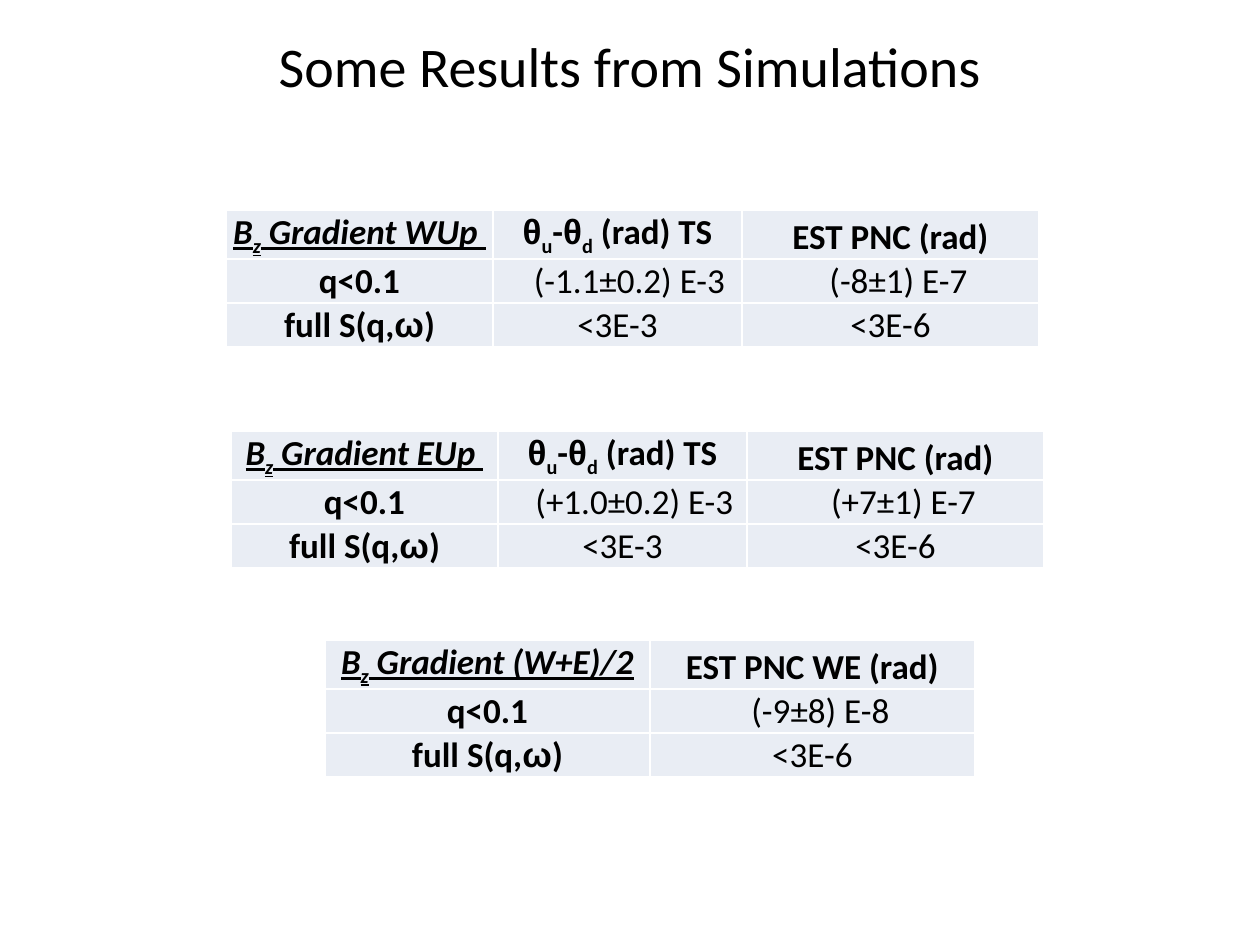
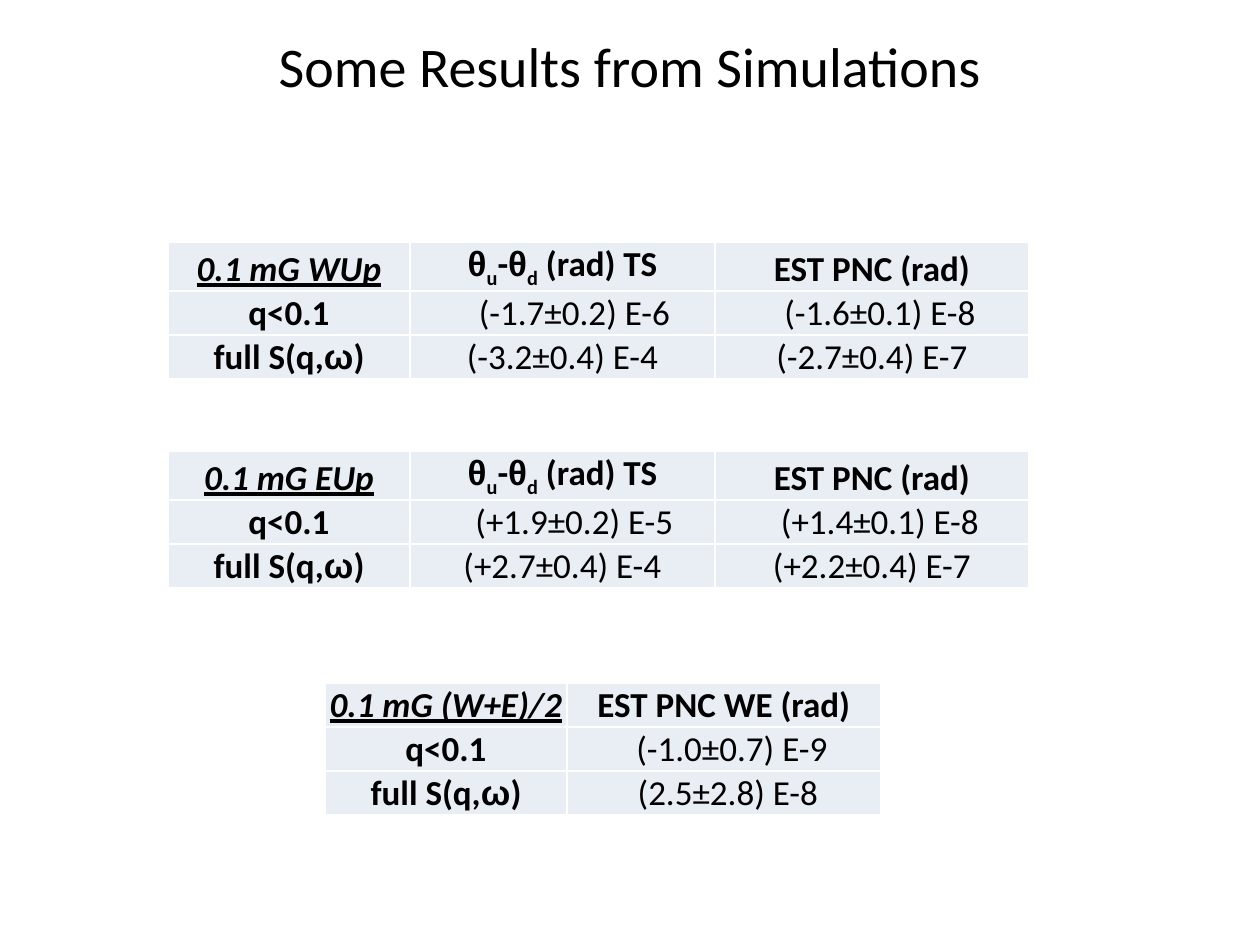
"""Build two slides of simulation results, each with three small tables."""
from itertools import groupby

from lxml.etree import SubElement
from pptx import Presentation
from pptx.dml.color import RGBColor
from pptx.enum.text import MSO_ANCHOR as Anchor, PP_ALIGN as Align
from pptx.oxml.ns import qn
from pptx.util import Pt

PX = 914400 // 126
BLACK = RGBColor(0x00, 0x00, 0x00)
WHITE = RGBColor(0xFF, 0xFF, 0xFF)
PALE_BLUE = RGBColor(0xE9, 0xED, 0xF4)
BODY_FONT, GREEK_FONT = "Calibri", "Arial"
GREEK = "θω"

TITLE = "Some Results from Simulations"
TITLE_BOX = (63, 10, 1134, 110)
ROW_HEIGHT, SUBSCRIPT_ROW_HEIGHT = 44, 49
SPACE_WIDTH = 8

ROTATION = "θ_u-θ_d (rad) TS"
ASYMMETRY = "EST PNC (rad)"
AVERAGE = "EST PNC WE (rad)"
ROW_LABELS = ("q<0.1", "full S(q,ω)")

# Each table: left, top, column widths, header, low-q values, full values, indents in spaces
SLIDES = [
    [
        (226, 210, (267, 249, 297), ("B_z Gradient WUp ", ROTATION, ASYMMETRY),
         ("(-1.1±0.2) E-3", "(-8±1) E-7"), ("<3E-3", "<3E-6"), ((3, 2), (0, 0))),
        (231, 431, (267, 249, 297), ("B_z Gradient EUp ", ROTATION, ASYMMETRY),
         ("(+1.0±0.2) E-3", "(+7±1) E-7"), ("<3E-3", "<3E-6"), ((3, 2), (0, 0))),
        (325, 640, (325, 325), ("B_z Gradient (W+E)/2", AVERAGE),
         ("(-9±8) E-8",), ("<3E-6",), ((2,), (0,))),
    ],
    [
        (168, 242, (242, 305, 314), ("0.1 mG WUp", ROTATION, ASYMMETRY),
         ("(-1.7±0.2) E-6", "(-1.6±0.1) E-8"), ("(-3.2±0.4) E-4", "(-2.7±0.4) E-7"),
         ((3, 2), (0, 0))),
        (168, 451, (242, 305, 314), ("0.1 mG EUp", ROTATION, ASYMMETRY),
         ("(+1.9±0.2) E-5", "(+1.4±0.1) E-8"), ("(+2.7±0.4) E-4", "(+2.2±0.4) E-7"),
         ((3, 2), (0, 0))),
        (325, 683, (242, 314), ("0.1 mG (W+E)/2", AVERAGE),
         ("(-1.0±0.7) E-9",), ("(2.5±2.8) E-8",), ((2,), (1,))),
    ],
]


def split_runs(markup):
    """Yield (text, is_greek, is_subscript); an underscore lowers the next letter."""
    letters = [(letter, letter in GREEK, markup[max(index - 1, 0)] == "_")
               for index, letter in enumerate(markup) if letter != "_"]
    for (greek, subscript), group in groupby(letters, key=lambda item: item[1:]):
        yield "".join(item[0] for item in group), greek, subscript


def write_runs(paragraph, markup, size, bold=False, emphasis=False):
    """Write marked-up text as formatted, centred runs."""
    paragraph.alignment = Align.CENTER
    for text, greek, subscript in split_runs(markup):
        run = paragraph.add_run()
        run.text = text
        font = run.font
        font.name = GREEK_FONT if greek else BODY_FONT
        font.size = Pt(size)
        font.color.rgb = BLACK
        font.bold, font.italic, font.underline = bold, emphasis, emphasis
        if subscript:
            run._r.get_or_add_rPr().set("baseline", "-25000")


def style_cell(cell, indent):
    """Give a cell white borders, a pale fill and narrow margins."""
    properties = cell._tc.get_or_add_tcPr()
    for side in ("lnL", "lnR", "lnT", "lnB"):
        line = SubElement(properties, qn(f"a:{side}"), w=str(Pt(1)))
        fill = SubElement(line, qn("a:solidFill"))
        SubElement(fill, qn("a:srgbClr"), val=str(WHITE))
    cell.fill.solid()
    cell.fill.fore_color.rgb = PALE_BLUE
    cell.vertical_anchor = Anchor.BOTTOM
    cell.margin_left = (1 + indent * SPACE_WIDTH) * PX
    cell.margin_right = cell.margin_top = PX
    cell.margin_bottom = 0


def add_results_table(slide, left, top, widths, header, low_q, full, indents):
    """Add one table with a header row and two rows of values."""
    rows = [header] + [(label, *values) for label, values in zip(ROW_LABELS, (low_q, full))]
    row_indents = [(0,) * len(header)] + [(0, *spaces) for spaces in indents]
    heights = [SUBSCRIPT_ROW_HEIGHT if "_" in "".join(row) else ROW_HEIGHT for row in rows]
    table = slide.shapes.add_table(len(rows), len(widths), left * PX, top * PX,
                                   sum(widths) * PX, sum(heights) * PX).table
    table.first_row = table.horz_banding = False
    for column, width in zip(table.columns, widths):
        column.width = width * PX
    for row_index, (row, height) in enumerate(zip(rows, heights)):
        table.rows[row_index].height = height * PX
        for column_index, text in enumerate(row):
            cell = table.cell(row_index, column_index)
            style_cell(cell, row_indents[row_index][column_index])
            write_runs(cell.text_frame.paragraphs[0], text, 20,
                       bold=row_index == 0 or column_index == 0,
                       emphasis=row_index == 0 and column_index == 0)


def add_title(slide):
    """Place and format the title placeholder."""
    title = slide.shapes.title
    title.left, title.top, title.width, title.height = (side * PX for side in TITLE_BOX)
    title.text_frame.vertical_anchor = Anchor.MIDDLE
    write_runs(title.text_frame.paragraphs[0], TITLE, 32)


def main():
    """Build and save the presentation."""
    presentation = Presentation()
    presentation.slide_width, presentation.slide_height = 1260 * PX, 945 * PX
    for tables in SLIDES:
        slide = presentation.slides.add_slide(presentation.slide_layouts[5])
        add_title(slide)
        for table in tables:
            add_results_table(slide, *table)
    presentation.save("out.pptx")


if __name__ == "__main__":
    main()
